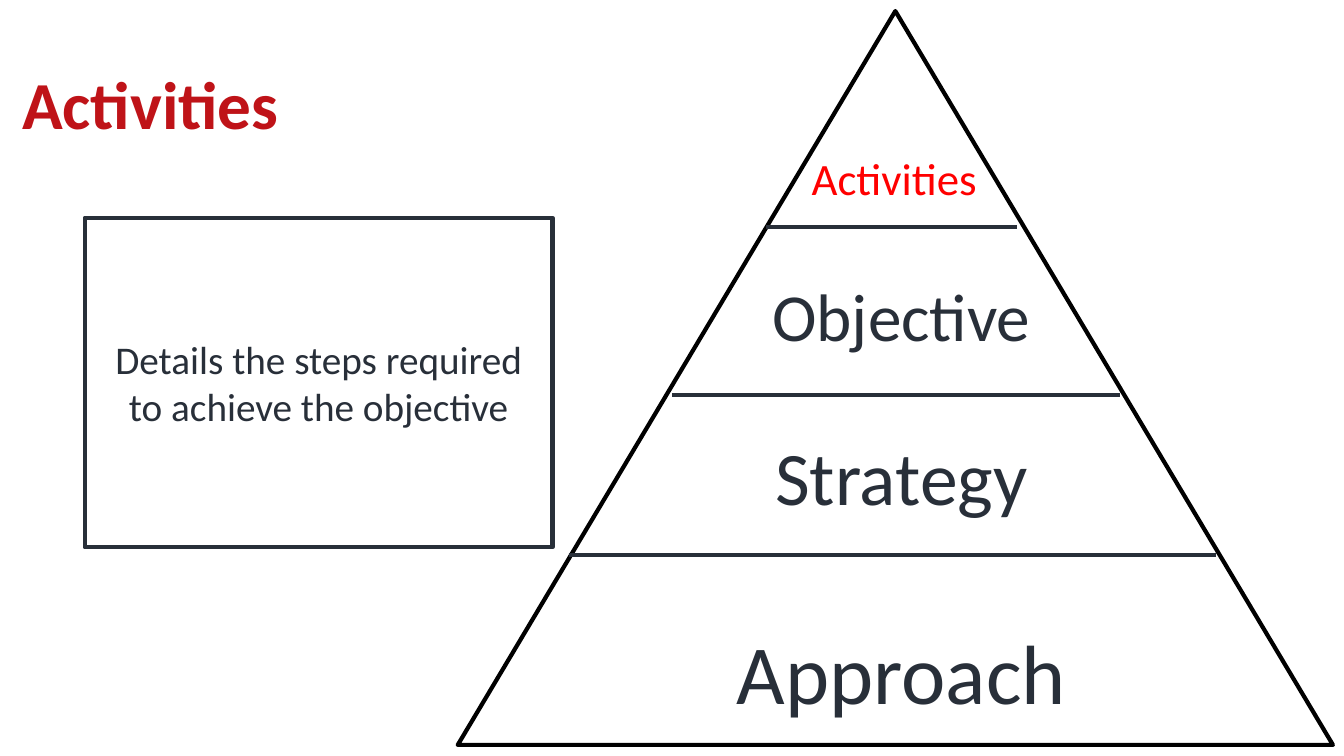
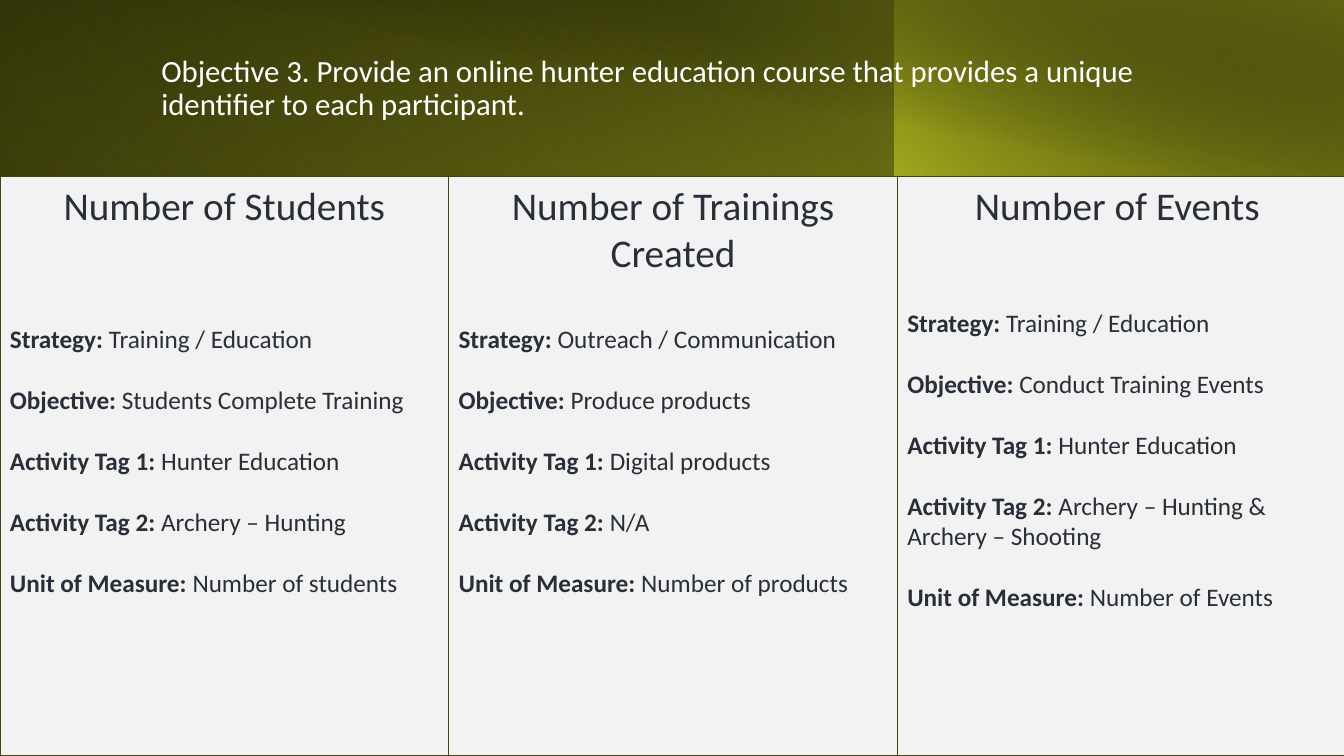
from dataclasses import dataclass
from typing import Any

from lxml.etree import SubElement
from pptx import Presentation
from pptx.dml.color import RGBColor
from pptx.enum.shapes import MSO_CONNECTOR, MSO_SHAPE
from pptx.enum.text import MSO_ANCHOR, MSO_AUTO_SIZE, PP_ALIGN
from pptx.oxml.ns import qn
from pptx.shapes.autoshape import Shape
from pptx.slide import Slide
from pptx.util import Inches, Pt

FONT = "Calibri"
INK, RED, ALERT = "282F39", "BF1318", "FF0000"
WHITE, BLACK, PALE = "FFFFFF", "000000", "F2F2F2"
OLIVE, MOSS, LIME, EDGE = "91971A", "616412", "C2C923", "44470D"
TITLE_ONLY = 5
ROW_GAP = 22

Box = tuple[float, float, float, float]
Stop = tuple[int, str, int]


@dataclass
class Level:
    text: str
    left: float
    top: float
    size: int
    color: str = INK


@dataclass
class Rule:
    left: float
    right: float
    y: float


@dataclass
class Band:
    """A gradient layer; each stop is position, colour and opacity in percent."""
    box: Box
    angle: int
    stops: tuple[Stop, Stop]


@dataclass
class Column:
    head: str
    gap: int
    values: tuple[str, ...]


LEVELS = (
    Level("Strategy", 5.73, 4.27, 54),
    Level("Approach", 5.73, 6.21, 60),
    Level("Objective", 5.73, 2.68, 48),
    Level("Activities", 5.66, 1.32, 32, ALERT),
)
RULES = (Rule(5.64, 12.06, 5.51), Rule(7.6, 10.09, 2.25), Rule(6.67, 11.11, 3.92))

# Angles run counter-clockwise from left-to-right.
BANDS = (
    Band((0, 0, 13.33, 1.74), 320, ((0, BLACK, 100), (100, OLIVE, 100))),
    Band((0, 0, 8.88, 1.74), 230, ((20, LIME, 0), (100, MOSS, 55))),
    Band((8.87, 0, 4.46, 1.74), 40, ((0, LIME, 66), (100, BLACK, 30))),
    Band((0.5, 0, 12.83, 1.75), 80, ((50, BLACK, 0), (99, MOSS, 52))),
)
LABELS = ("Strategy", "Objective", "Activity Tag 1", "Activity Tag 2", "Unit of Measure")
COLUMNS = (
    Column("Number of Students", 68, (
        "Training / Education", "Students Complete Training", "Hunter Education",
        "Archery – Hunting", "Number of students")),
    Column("Number of Trainings Created", 34, (
        "Outreach / Communication", "Produce products", "Digital products",
        "N/A", "Number of products")),
    Column("Number of Events ", 56, (
        "Training / Education", "Conduct Training Events", "Hunter Education",
        "Archery – Hunting & Archery – Shooting", "Number of Events")),
)


def rgb(code: str) -> RGBColor:
    return RGBColor.from_string(code)


def put(item: Any, values: dict[str, Any]) -> None:
    for name, value in values.items():
        setattr(item, name, value)


def write(para: Any, text: str, size: int, color: str = INK, bold: bool = False) -> None:
    run = para.add_run()
    run.text = text
    put(run.font, {"name": FONT, "size": Pt(size), "bold": bold})
    run.font.color.rgb = rgb(color)


def add_title(slide: Slide, box: Box, text: str, size: int, color: str,
              bold: bool = False) -> Shape:
    title = slide.shapes.title
    put(title, dict(zip(("left", "top", "width", "height"), map(Inches, box))))
    frame = title.text_frame
    put(frame, {"word_wrap": True, "auto_size": MSO_AUTO_SIZE.NONE,
                "vertical_anchor": MSO_ANCHOR.MIDDLE})
    para = frame.paragraphs[0]
    put(para, {"alignment": PP_ALIGN.LEFT, "line_spacing": 0.9})
    write(para, text, size, color, bold)
    return title


def add_box(slide: Slide, kind: MSO_SHAPE, box: Box, fill: str = "",
            line: str = "", width: float = 0) -> Shape:
    shape = slide.shapes.add_shape(kind, *map(Inches, box))
    shape.shadow.inherit = False
    if fill:
        shape.fill.solid()
        shape.fill.fore_color.rgb = rgb(fill)
    else:
        shape.fill.background()
    if line:
        shape.line.color.rgb = rgb(line)
        shape.line.width = Pt(width)
    else:
        shape.line.fill.background()
    return shape


def add_band(slide: Slide, band: Band) -> None:
    shape = add_box(slide, MSO_SHAPE.RECTANGLE, band.box)
    shape.fill.gradient()
    shape.fill.gradient_angle = band.angle
    for stop, (place, color, _) in zip(shape.fill.gradient_stops, band.stops):
        stop.position = place / 100
        stop.color.rgb = rgb(color)
    tints = list(shape.fill._xPr.iter(qn("a:srgbClr")))
    for tint, (_, _, alpha) in zip(tints, band.stops):
        SubElement(tint, qn("a:alpha")).set("val", str(alpha * 1000))


def add_rule(slide: Slide, rule: Rule) -> None:
    ends = map(Inches, (rule.left, rule.y, rule.right, rule.y))
    line = slide.shapes.add_connector(MSO_CONNECTOR.STRAIGHT, *ends)
    line.line.color.rgb = rgb(INK)
    line.line.width = Pt(3)
    SubElement(line._element.spPr, qn("a:effectLst"))


def add_level(slide: Slide, level: Level) -> None:
    box = map(Inches, (level.left, level.top, 6.42, 0.89))
    frame = slide.shapes.add_textbox(*box).text_frame
    put(frame, {"word_wrap": True, "vertical_anchor": MSO_ANCHOR.MIDDLE})
    para = frame.paragraphs[0]
    para.alignment = PP_ALIGN.CENTER
    write(para, level.text, level.size, level.color)


def add_column(slide: Slide, column: Column, left: float) -> None:
    box = (left, 1.75, 4.45, 5.75)
    frame = add_box(slide, MSO_SHAPE.RECTANGLE, box, PALE, EDGE, 1).text_frame
    put(frame, {"word_wrap": True, "vertical_anchor": MSO_ANCHOR.TOP})
    head = frame.paragraphs[0]
    head.alignment = PP_ALIGN.CENTER
    write(head, column.head, 28)
    for row, (label, value) in enumerate(zip(LABELS, column.values)):
        para = frame.add_paragraph()
        gap = ROW_GAP if row else column.gap
        put(para, {"alignment": PP_ALIGN.LEFT, "space_before": Pt(gap)})
        write(para, f"{label}: ", 18, bold=True)
        write(para, value, 18)


def draw_pyramid(slide: Slide) -> None:
    add_title(slide, (0.12, 0.34, 7.79, 1.45), "Activities", 48, RED, True)
    note = add_box(slide, MSO_SHAPE.RECTANGLE, (0.84, 2.16, 4.64, 3.27), line=INK, width=3)
    put(note.text_frame, {"word_wrap": True, "vertical_anchor": MSO_ANCHOR.MIDDLE})
    para = note.text_frame.paragraphs[0]
    para.alignment = PP_ALIGN.CENTER
    write(para, "Details the steps required to achieve the objective", 28)
    add_box(slide, MSO_SHAPE.ISOSCELES_TRIANGLE, (4.54, 0.11, 8.68, 7.28),
            line=BLACK, width=3)
    for rule in RULES:
        add_rule(slide, rule)
    for level in LEVELS:
        add_level(slide, level)


def draw_columns(slide: Slide) -> None:
    for band in BANDS:
        add_band(slide, band)
    title = add_title(
        slide, (1.5, 0.32, 10.82, 1.13),
        "Objective 3. Provide an online hunter education course that provides "
        "a unique identifier to each participant.", 22, WHITE)
    slide.shapes._spTree.append(title._element)  # bring above the bands
    for spot, column in enumerate(COLUMNS):
        add_column(slide, column, spot * 4.45)


def main() -> None:
    deck = Presentation()
    put(deck, {"slide_width": Inches(13.33), "slide_height": Inches(7.5)})
    for draw in (draw_pyramid, draw_columns):
        draw(deck.slides.add_slide(deck.slide_layouts[TITLE_ONLY]))
    deck.save("out.pptx")


if __name__ == "__main__":
    main()
